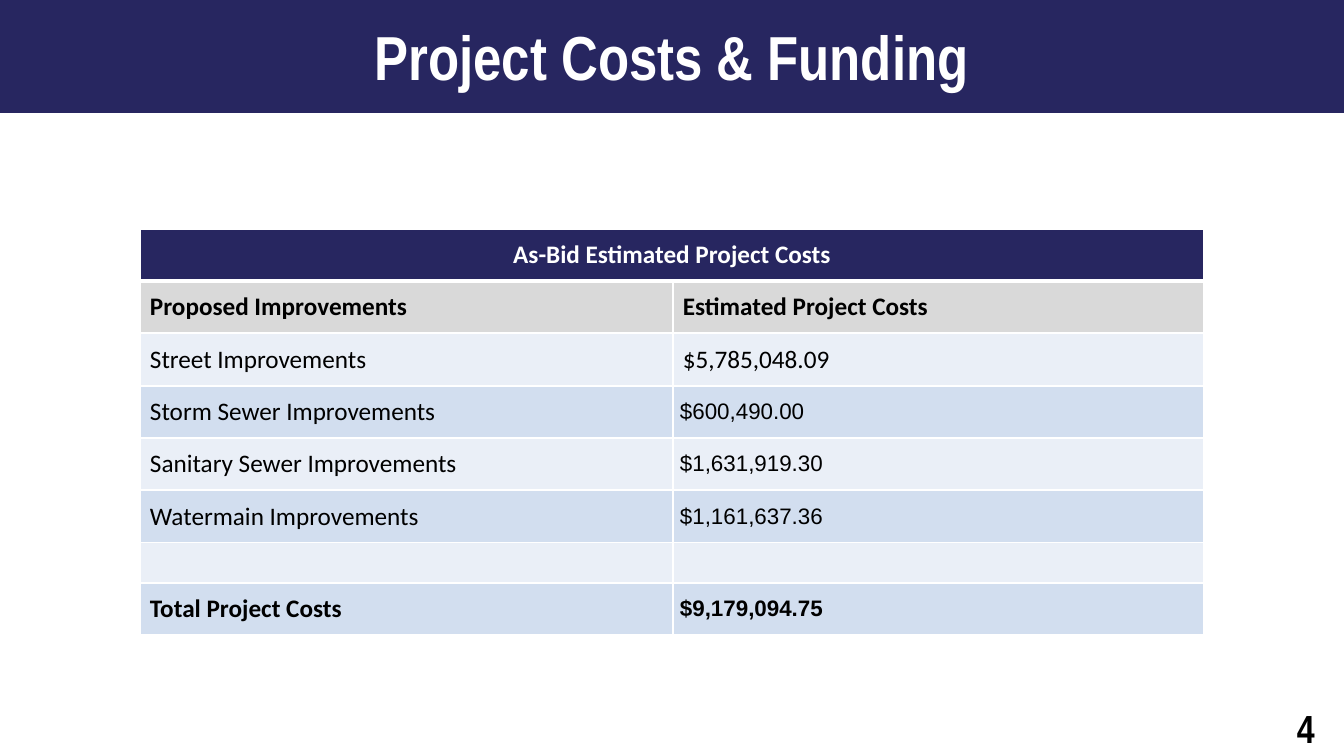
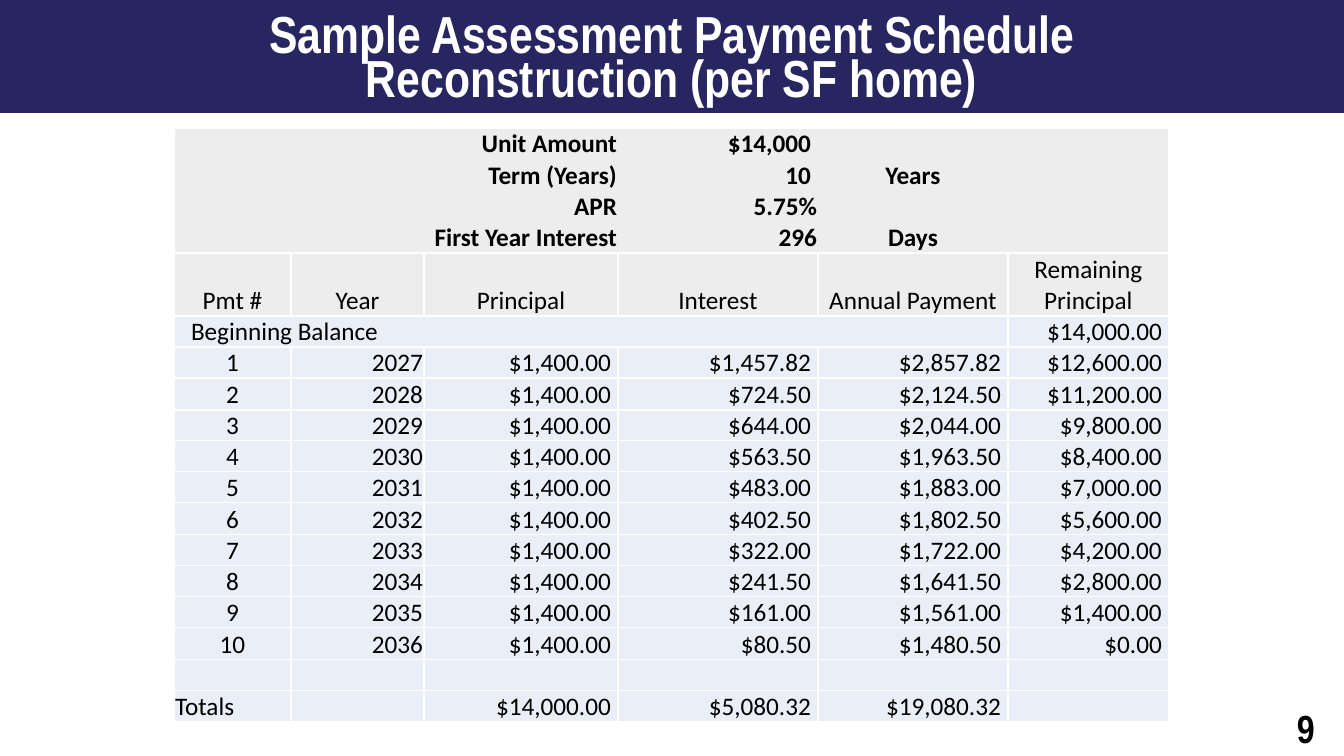
from dataclasses import dataclass

from lxml import etree
from pptx import Presentation
from pptx import util as u
from pptx.dml.color import RGBColor
from pptx.enum import shapes, text
from pptx.oxml import ns

EMU_PER_PX = 914400 / 100.8
LEFT, CENTER, RIGHT = text.PP_ALIGN.LEFT, text.PP_ALIGN.CENTER, text.PP_ALIGN.RIGHT
MIDDLE, BOTTOM = text.MSO_ANCHOR.MIDDLE, text.MSO_ANCHOR.BOTTOM


def px(length):
    return u.Emu(round(length * EMU_PER_PX))


@dataclass(frozen=True)
class Theme:
    navy: str = "272660"
    white: str = "FFFFFF"
    black: str = "000000"
    silver: str = "D9D9D9"
    pale_gray: str = "EDEDED"
    pale_blue: str = "EAEFF7"
    soft_blue: str = "D2DEEF"
    title_font: str = "Arial Narrow"
    body_font: str = "Calibri"
    figure_font: str = "Arial"
    title_size: float = 44.4
    long_title_size: float = 37.2
    number_size: float = 28
    body_size: float = 18
    figure_size: float = 16
    border: float = 1
    heavy_border: float = 3


THEME = Theme()


@dataclass
class Cell:
    words: str = ""
    fill: str = THEME.pale_blue
    align: text.PP_ALIGN = LEFT
    anchor: text.MSO_ANCHOR = MIDDLE
    bold: bool = False
    color: str = THEME.black
    font: str = THEME.body_font
    size: float = THEME.body_size
    margins: tuple = (10, 5, 10, 5)  # left, top, right, bottom
    span: int = 1
    sides: str = "LRTB"  # sides that carry a border
    bottom_border: float = THEME.border


class Deck:
    def __init__(self, theme):
        self.theme = theme
        self.presentation = Presentation()
        self.presentation.slide_width = px(1344)
        self.presentation.slide_height = px(756)
        self.slide = None

    def add_slide(self, title_lines, title_size, title_box, number):
        """Start a slide with the band, title and number that all slides share."""
        theme = self.theme
        self.slide = self.presentation.slides.add_slide(self.presentation.slide_layouts[6])
        self.band(0, 0, 1344, 113, theme.navy)
        self.text_box(title_box, title_lines, title_size, theme.white, CENTER, MIDDLE, 0.7)
        self.text_box((1287, 705, 57, 51), [number], theme.number_size, theme.black,
                      LEFT, text.MSO_ANCHOR.TOP, 0.9)

    def band(self, left, top, width, height, color):
        shape = self.slide.shapes.add_shape(
            shapes.MSO_SHAPE.RECTANGLE, px(left), px(top), px(width), px(height))
        shape.shadow.inherit = False
        shape.fill.solid()
        shape.fill.fore_color.rgb = RGBColor.from_string(color)
        shape.line.fill.background()

    def text_box(self, box, lines, size, color, align, anchor, spacing):
        frame = self.slide.shapes.add_textbox(*map(px, box)).text_frame
        frame.word_wrap = True
        frame.vertical_anchor = anchor
        for index, line in enumerate(lines):
            paragraph = frame.add_paragraph() if index else frame.paragraphs[0]
            paragraph.alignment = align
            paragraph.line_spacing = spacing
            self.run(paragraph, line, self.theme.title_font, size, color, True)

    def run(self, paragraph, words, font, size, color, bold):
        run = paragraph.add_run()
        run.text = words
        run.font.name = font
        run.font.size = u.Pt(size)
        run.font.bold = bold
        run.font.color.rgb = RGBColor.from_string(color)

    def table(self, left, top, widths, heights, rows):
        table = self.slide.shapes.add_table(
            len(rows), len(widths), px(left), px(top), px(sum(widths)), px(sum(heights))).table
        table.first_row = table.horz_banding = False
        for column, width in zip(table.columns, widths):
            column.width = px(width)
        for row, height in zip(table.rows, heights):
            row.height = px(height)
        for row_index, row in enumerate(rows):
            column_index = 0
            for style in row:
                last = column_index + style.span - 1
                for index in range(column_index, last + 1):
                    self.cell_style(table.cell(row_index, index), style)
                first_cell = table.cell(row_index, column_index)
                if style.span > 1:
                    first_cell.merge(table.cell(row_index, last))
                if style.words:
                    paragraph = first_cell.text_frame.paragraphs[0]
                    paragraph.alignment = style.align
                    self.run(paragraph, style.words, style.font, style.size,
                             style.color, style.bold)
                column_index = last + 1

    def cell_style(self, cell, style):
        # Borders go in before the fill, as the file format requires
        properties = cell._tc.get_or_add_tcPr()
        for side in "LRTB":
            width = style.bottom_border if side == "B" else self.theme.border
            line = etree.SubElement(properties, ns.qn(f"a:ln{side}"), w=str(u.Pt(width)))
            if side in style.sides:
                fill = etree.SubElement(line, ns.qn("a:solidFill"))
                etree.SubElement(fill, ns.qn("a:srgbClr"), val=self.theme.white)
            else:
                etree.SubElement(line, ns.qn("a:noFill"))
        cell.fill.solid()
        cell.fill.fore_color.rgb = RGBColor.from_string(style.fill)
        cell.vertical_anchor = style.anchor
        (cell.margin_left, cell.margin_top,
         cell.margin_right, cell.margin_bottom) = map(px, style.margins)


def project_costs(deck):
    theme = deck.theme
    deck.add_slide(["Project Costs & Funding"], theme.title_size, (142, 31, 1060, 68), "4")

    def figure(amount, fill, bold=False):
        return Cell(amount, fill, bold=bold, font=theme.figure_font,
                    size=theme.figure_size, margins=(7, 0, 7, 0))

    rows = [
        [Cell("As-Bid Estimated Project Costs", theme.navy, CENTER, bold=True,
              color=theme.white, span=2, bottom_border=theme.heavy_border)],
        [Cell(heading, theme.silver, bold=True)
         for heading in ("Proposed Improvements", "Estimated Project Costs")],
        [Cell("Street Improvements"), Cell("$5,785,048.09")],
    ]
    # Remaining rows alternate between the two blues
    for name, amount, fill in (
        ("Storm Sewer Improvements", "$600,490.00", theme.soft_blue),
        ("Sanitary Sewer Improvements", "$1,631,919.30", theme.pale_blue),
        ("Watermain Improvements", "$1,161,637.36", theme.soft_blue),
    ):
        rows.append([Cell(name, fill), figure(amount, fill)])
    rows.append([Cell(), Cell()])
    rows.append([Cell("Total Project Costs", theme.soft_blue, bold=True),
                 figure("$9,179,094.75", theme.soft_blue, True)])
    deck.table(140, 229, [533, 531], [52, 52, 53, 52, 52, 53, 40, 52], rows)


def payment_schedule(deck):
    theme = deck.theme
    deck.add_slide(["Sample Assessment Payment Schedule", "Reconstruction (per SF home)"],
                   theme.long_title_size, (142, 13, 1060, 99), "9")
    amount, years, rate, first_days = 14000, 10, 0.0575, 296

    def entry(words="", align=LEFT, inset=1, **style):
        return Cell(words, align=align, anchor=BOTTOM, margins=(inset, 0, inset, 0), **style)

    def money(value):
        return entry(f"${value:,.2f}", RIGHT, 7)

    # Loan terms: one gray panel with a border around the outside only
    rows = []
    terms = (("Unit Amount", f"${amount:,}", 7, "", "T"),
             ("Term (Years)", str(years), 7, "Years", ""),
             ("APR", f"{rate:.2%}", 1, "", ""),
             ("First Year Interest", str(first_days), 1, "Days", "B"))
    for label, value, inset, unit, edge in terms:
        panel = {"fill": theme.pale_gray, "bold": True}
        row = [entry(label, RIGHT, span=3, sides="L" + edge, **panel),
               entry(value, RIGHT, inset, sides=edge, **panel)]
        if unit:
            row += [entry(unit, CENTER, sides=edge, **panel),
                    entry(sides="R" + edge, **panel)]
        else:
            row.append(entry(span=2, sides="R" + edge, **panel))
        rows.append(row)

    # Column headings and opening balance
    headings = ("Pmt #", "Year", "Principal", "Interest", "Annual Payment",
                "Remaining Principal")
    rows.append([entry(heading, CENTER, fill=theme.pale_gray) for heading in headings])
    rows.append([entry("Beginning Balance", inset=17, span=5), money(amount)])

    # Yearly payments; the first also carries interest for the opening days
    principal = amount / years
    balance, total_interest = amount, 0
    for number in range(1, years + 1):
        interest = balance * rate
        if number == 1:
            interest += interest * first_days / 365
        balance -= principal
        total_interest += interest
        rows.append([entry(str(number), CENTER), entry(str(2026 + number), RIGHT),
                     money(principal), money(interest), money(principal + interest),
                     money(balance)])

    rows.append([entry() for _ in headings])
    rows.append([entry("Totals"), entry(), money(amount), money(total_interest),
                 money(amount + total_interest), entry()])

    # Even text lines; the heading row takes two of them
    line_counts = [2 if index == len(terms) else 1 for index in range(len(rows))]
    edges = [round(31.28 * sum(line_counts[:index])) for index in range(len(rows) + 1)]
    heights = [lower - upper for upper, lower in zip(edges, edges[1:])]
    deck.table(174, 128, [117, 133, 194, 200, 190, 161], heights, rows)


def main():
    deck = Deck(THEME)
    project_costs(deck)
    payment_schedule(deck)
    deck.presentation.save("out.pptx")


if __name__ == "__main__":
    main()
